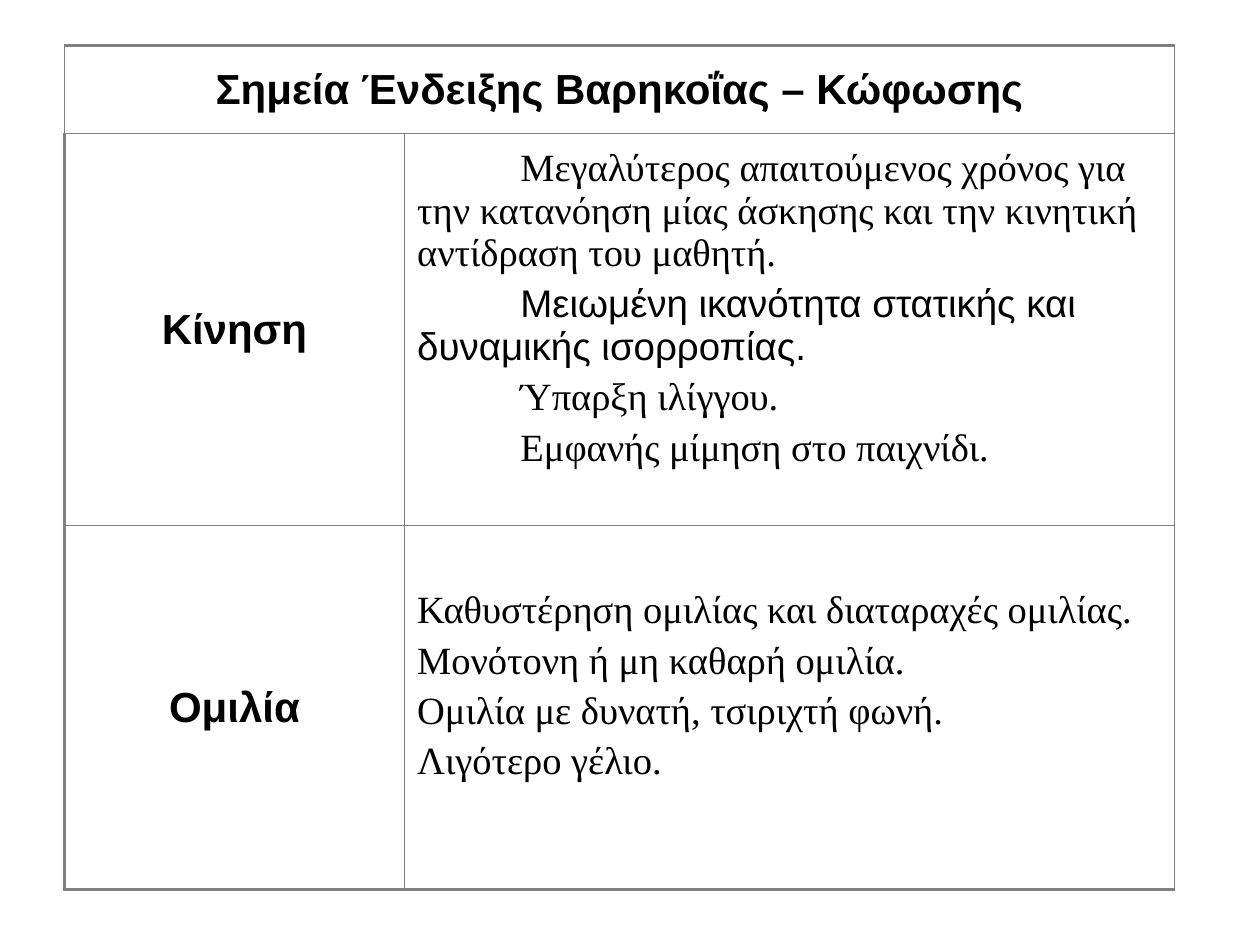
from lxml import etree
from pptx import Presentation
from pptx.dml.color import RGBColor
from pptx.enum.text import MSO_ANCHOR, PP_ALIGN
from pptx.oxml.ns import qn
from pptx.util import Pt

MIDDLE = MSO_ANCHOR.MIDDLE
LEFT, CENTER, JUSTIFY = PP_ALIGN.LEFT, PP_ALIGN.CENTER, PP_ALIGN.JUSTIFY
BLACK = RGBColor(0x00, 0x00, 0x00)
GREY = RGBColor(0x80, 0x80, 0x80)
SANS, SERIF = "Arial", "Times New Roman"
HEAD = {"name": SANS, "size": Pt(24), "bold": True}
BODY = {"name": SERIF, "size": Pt(22), "bold": False}
INDENT, GAP, FOOT = 59, 4.4, 28

BOX = (36.75, 26, 634.5, 482.4)
SHARES = (194.5, 440)
ROWS = (50.4, 224, 208)

TITLE = "Σημεία Ένδειξης Βαρηκοΐας – Κώφωσης"
TOPICS = [
    ("Κίνηση", LEFT, INDENT, [
        ("Μεγαλύτερος απαιτούμενος χρόνος για την κατανόηση μίας άσκησης "
         "και την κινητική αντίδραση του μαθητή.", SERIF),
        ("Μειωμένη ικανότητα στατικής και δυναμικής ισορροπίας.", SANS),
        ("Ύπαρξη ιλίγγου.", SERIF),
        ("Εμφανής μίμηση στο παιχνίδι.", SERIF),
    ]),
    ("Ομιλία", JUSTIFY, 0, [
        ("Καθυστέρηση ομιλίας και διαταραχές ομιλίας.", SERIF),
        ("Μονότονη ή μη καθαρή ομιλία.", SERIF),
        ("Ομιλία με δυνατή, τσιριχτή φωνή.", SERIF),
        ("Λιγότερο γέλιο.", SERIF),
    ]),
]


def style(font, looks):
    for key, value in looks.items():
        setattr(font, key, value)
    font.color.rgb = BLACK


def border(cell, widths):
    """Draw the four edges; widths maps L, R, T, B to points."""
    props = cell._tc.get_or_add_tcPr()
    for place, side in enumerate("LRTB"):
        line = etree.Element(qn(f"a:ln{side}"), w=str(Pt(widths[side])))
        fill = etree.SubElement(line, qn("a:solidFill"))
        etree.SubElement(fill, qn("a:srgbClr"), val=str(GREY))
        props.insert(place, line)


def label(cell, text):
    para = cell.text_frame.paragraphs[0]
    para.alignment = CENTER
    run = para.add_run()
    run.text = text
    style(run.font, HEAD)


def points(cell, items, align, indent):
    cell.margin_bottom = Pt(FOOT)
    frame = cell.text_frame
    for i, (text, face) in enumerate(items):
        para = frame.add_paragraph() if i else frame.paragraphs[0]
        para.alignment = align
        if i:
            para.space_before = Pt(GAP)
        props = para._p.get_or_add_pPr()
        props.set("marL", "0")
        props.set("indent", str(Pt(indent)))
        run = para.add_run()
        run.text = text
        style(run.font, {**BODY, "name": face})


def signs(slide, box):
    left, top, width, height = box
    grid = slide.shapes.add_table(
        len(ROWS), len(SHARES), Pt(left), Pt(top), Pt(width), Pt(height)).table
    grid.first_row = grid.horz_banding = False
    for col, share in zip(grid.columns, SHARES):
        col.width = Pt(width * share / sum(SHARES))
    for row, share in zip(grid.rows, ROWS):
        row.height = Pt(height * share / sum(ROWS))

    last = len(ROWS) - 1
    for r in range(len(ROWS)):
        for c in range(len(SHARES)):
            cell = grid.cell(r, c)
            cell.vertical_anchor = MIDDLE
            cell.fill.background()
            border(cell, {"L": 2 if r and not c else 1, "R": 1,
                          "T": 1 if r else 2, "B": 2 if r == last else 1})
    grid.cell(0, 0).merge(grid.cell(0, 1))

    label(grid.cell(0, 0), TITLE)
    for r, (topic, align, indent, items) in enumerate(TOPICS, 1):
        label(grid.cell(r, 0), topic)
        points(grid.cell(r, 1), items, align, indent)


def main():
    deck = Presentation()
    deck.slide_width, deck.slide_height = Pt(720), Pt(540)
    signs(deck.slides.add_slide(deck.slide_layouts[6]), BOX)
    deck.save("out.pptx")


if __name__ == "__main__":
    main()
